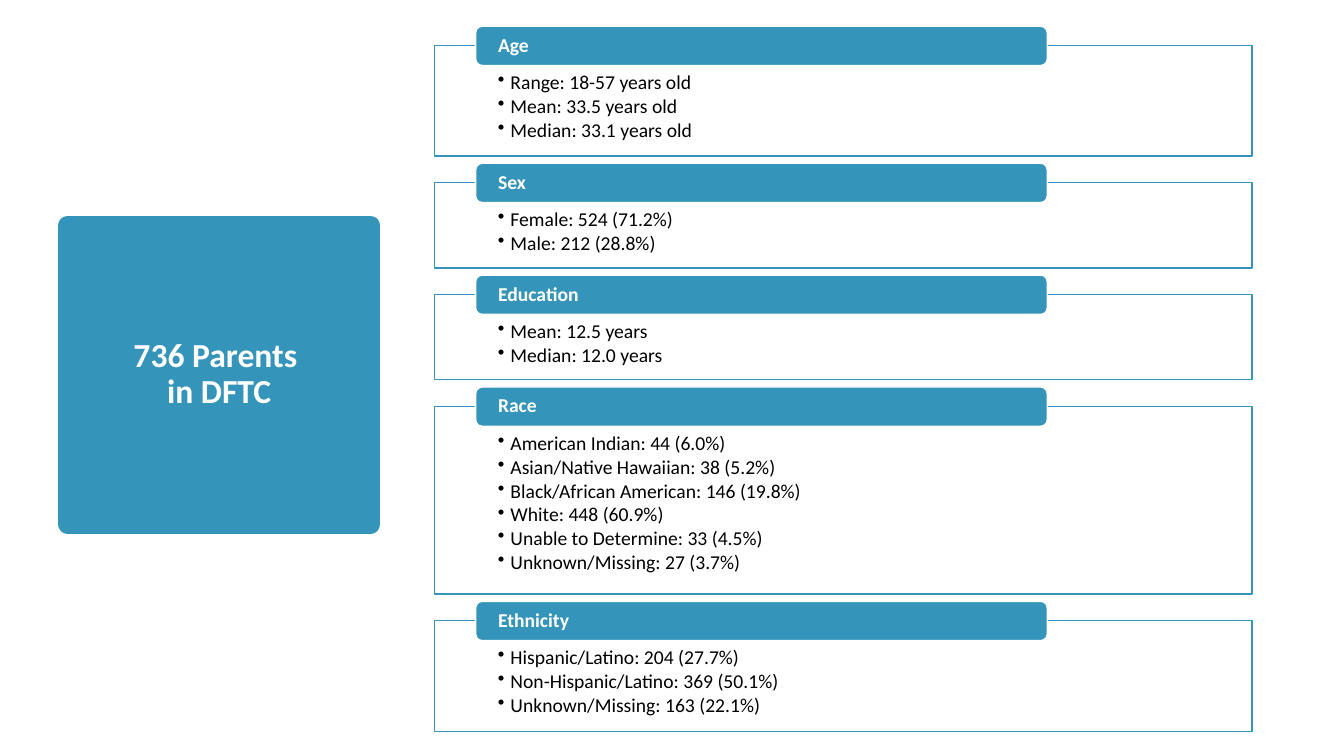
"""Build the slide that summarises parent demographics in DFTC."""
from dataclasses import dataclass

from lxml import etree
from pptx import Presentation
from pptx.dml.color import RGBColor
from pptx.enum.shapes import MSO_SHAPE
from pptx.enum.text import MSO_ANCHOR, PP_ALIGN
from pptx.oxml.ns import qn
from pptx.util import Pt

RECT, ROUNDED = MSO_SHAPE.RECTANGLE, MSO_SHAPE.ROUNDED_RECTANGLE
TOP, MIDDLE = MSO_ANCHOR.TOP, MSO_ANCHOR.MIDDLE
LEFT, CENTER = PP_ALIGN.LEFT, PP_ALIGN.CENTER


@dataclass(frozen=True)
class Theme:
    """Colours, font and type sizes of the slide."""
    accent: RGBColor = RGBColor(0x34, 0x94, 0xBA)
    white: RGBColor = RGBColor(0xFF, 0xFF, 0xFF)
    ink: RGBColor = RGBColor(0, 0, 0)
    font: str = "Calibri"
    headline: float = 24
    body: float = 14


THEME = Theme()
SLIDE_SIZE = (960, 540)
HEADLINE = "736 Parents \vin DFTC"
HEADLINE_BOX = (48.2, 161.3, 216.7, 213.1)
PANELS_BOX = (310.3, 32.5, 583.9)
PANEL_GAP = 18.9
TAB_OFFSET = (29.5, -13.8)
TAB_SIZE = (408.3, 28.1)
BULLET_INDENT = 9

DEMOGRAPHICS = [
    ("Age", 79, ["Range: 18-57 years old", "Mean: 33.5 years old",
                 "Median: 33.1 years old"]),
    ("Sex", 61, ["Female: 524 (71.2%)", "Male: 212 (28.8%)"]),
    ("Education", 61, ["Mean: 12.5 years", "Median: 12.0 years"]),
    ("Race", 134.2, ["American Indian: 44 (6.0%)",
                     "Asian/Native Hawaiian: 38 (5.2%)",
                     "Black/African American: 146 (19.8%)",
                     "White: 448 (60.9%)",
                     "Unable to Determine: 33 (4.5%)",
                     "Unknown/Missing: 27 (3.7%)"]),
    ("Ethnicity", 79, ["Hispanic/Latino: 204 (27.7%)",
                       "Non-Hispanic/Latino: 369 (50.1%)",
                       "Unknown/Missing: 163 (22.1%)"]),
]


def add_block(slide, kind, box, fill, line, line_width=1):
    """Add a filled and outlined shape without shadow."""
    block = slide.shapes.add_shape(kind, *(Pt(length) for length in box))
    block.shadow.inherit = False
    block.fill.solid()
    block.fill.fore_color.rgb = fill
    block.line.color.rgb = line
    block.line.width = Pt(line_width)
    return block


def add_bullet(paragraph):
    """Give a paragraph a bullet with a hanging indent."""
    properties = paragraph._p.get_or_add_pPr()
    properties.set("marL", str(Pt(BULLET_INDENT)))
    properties.set("indent", str(-Pt(BULLET_INDENT)))
    etree.SubElement(properties, qn("a:buChar")).set("char", "•")


def write(block, lines, *, size, color, bold=False, align=LEFT, anchor=MIDDLE,
          insets=(0, 0, 0, 0), space_after=0, bulleted=False):
    """Write one paragraph per line into a shape."""
    frame = block.text_frame
    frame.word_wrap = True
    frame.vertical_anchor = anchor
    (frame.margin_left, frame.margin_top,
     frame.margin_right, frame.margin_bottom) = (Pt(inset) for inset in insets)
    for index, line in enumerate(lines):
        paragraph = frame.add_paragraph() if index else frame.paragraphs[0]
        paragraph.text = line
        paragraph.alignment = align
        paragraph.line_spacing = 0.9
        paragraph.space_after = Pt(space_after)
        for run in paragraph.runs:
            run.font.name = THEME.font
            run.font.size = Pt(size)
            run.font.bold = bold
            run.font.color.rgb = color
        if bulleted:
            add_bullet(paragraph)


def add_headline(slide, box):
    """Add the square headline whose thick outline rounds its corners."""
    headline = add_block(slide, RECT, box, THEME.accent, THEME.accent, 13.75)
    etree.SubElement(headline.line._get_or_add_ln(), qn("a:round"))
    write(headline, [HEADLINE], size=THEME.headline, color=THEME.white,
          bold=True, align=CENTER)


def add_panel(slide, box, topic, facts):
    """Add a panel of facts with its topic tab over the top edge."""
    left, top = box[:2]
    panel = add_block(slide, RECT, box, THEME.white, THEME.accent)
    write(panel, facts, size=THEME.body, color=THEME.ink, anchor=TOP,
          insets=(45.3, 19.4, 45.3, 8), space_after=1.9, bulleted=True)
    tab_box = (left + TAB_OFFSET[0], top + TAB_OFFSET[1], *TAB_SIZE)
    tab = add_block(slide, ROUNDED, tab_box, THEME.accent, THEME.white)
    write(tab, [topic], size=THEME.body, color=THEME.white, bold=True,
          insets=(14.6, 0, 14.6, 0))


def add_panels(slide, box):
    """Stack the demographic panels with equal gaps."""
    left, top, width = box
    for topic, height, facts in DEMOGRAPHICS:
        add_panel(slide, (left, top, width, height), topic, facts)
        top += height + PANEL_GAP


def main():
    """Build and save the presentation."""
    deck = Presentation()
    deck.slide_width, deck.slide_height = (Pt(side) for side in SLIDE_SIZE)
    slide = deck.slides.add_slide(deck.slide_layouts[6])
    add_headline(slide, HEADLINE_BOX)
    add_panels(slide, PANELS_BOX)
    deck.save("out.pptx")


if __name__ == "__main__":
    main()
